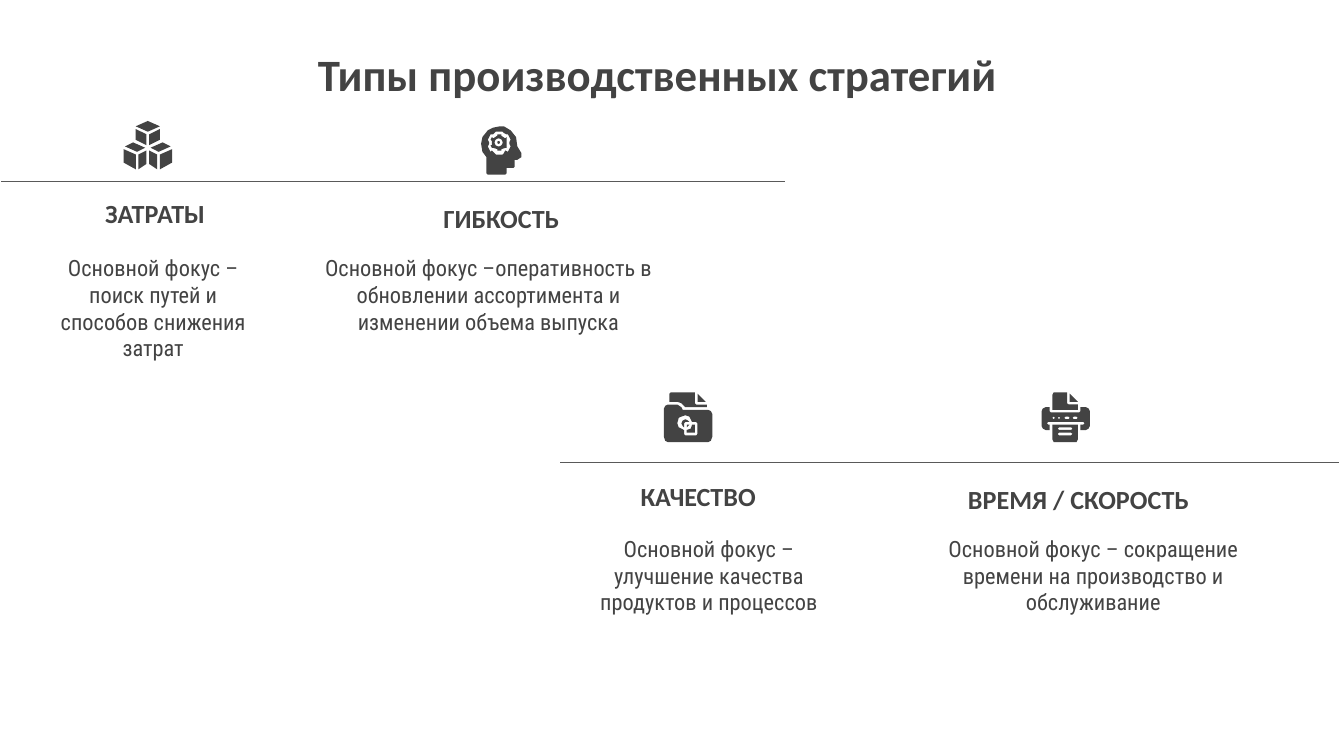
from math import cos, pi, sin

from pptx import Presentation
from pptx import util as u
from pptx.dml.color import RGBColor
from pptx.enum import shapes, text
from pptx.oxml.ns import qn
from lxml import etree

PX = u.Inches(1) // 100
INK = RGBColor(0x43, 0x43, 0x43)
RULE = RGBColor(0x59, 0x59, 0x59)


def px(*lengths):
    return [u.Emu(round(length * PX)) for length in lengths]


def circle(x, y, radius):
    turns = [2 * pi * step / 16 for step in range(16)]
    return [(x + radius * cos(turn), y + radius * sin(turn)) for turn in turns]


def slot(left, top, right, bottom):
    return [(left + 1, top), (right - 1, top), (right, top + 1), (right, bottom - 1),
            (right - 1, bottom), (left + 1, bottom), (left, bottom - 1), (left, top + 1)]


def cubes_icon():
    right_faces = [
        [(27, 6), (19, 10), (19, 18), (27, 14)],
        [(19, 22), (19, 32), (25, 36), (25, 25)],
        [(29, 16), (20, 20), (26, 23), (35, 19)],
        [(36, 21), (27, 25), (27, 36), (36, 31)],
    ]
    left_faces = [[(36 - x, y) for x, y in face] for face in right_faces]
    lid = [(18, 0), (9, 4), (18, 8), (27, 4)]
    return [[face] for face in right_faces + left_faces + [lid]]


def head_icon():
    profile = [(14, 0), (9, 1), (5, 3), (1, 8), (0, 13), (1, 19), (4, 23), (4, 35),
               (5, 36), (18, 36), (19, 35), (19, 31), (24, 31), (25, 30), (25, 25),
               (27, 25), (30, 23), (30, 20), (27, 15), (26, 8), (22, 3), (17, 0)]
    gear_gap = [(11, 4), (16, 4), (17, 5), (19, 6), (20, 6), (22, 10), (21, 12),
                (21, 13), (22, 15), (20, 19), (18, 18), (17, 20), (16, 21), (11, 21),
                (10, 20), (8, 18), (7, 19), (5, 15), (6, 13), (6, 12), (5, 10),
                (7, 6), (9, 6), (10, 5)]
    gear = [(12, 6), (12, 7), (9, 9), (8, 8), (7, 10), (8, 11), (8, 14), (7, 14),
            (8, 16), (9, 16), (12, 17), (12, 18), (15, 18), (15, 17), (18, 16),
            (19, 16), (19, 14), (19, 11), (19, 10), (19, 8), (18, 9),
            (15, 7), (15, 6)]
    return [[profile, gear_gap], [gear, circle(13, 12, 3)], [circle(13, 12, 1)]]


def folder_icon():
    corner = [(25, 1), (25, 7), (31, 7)]
    paper = [(5, 0), (4, 1), (4, 7), (10, 7), (13, 8), (16, 11), (32, 11), (32, 9),
             (24, 9), (23, 8), (23, 0)]
    overlap = [(17, 24), (17, 26), (19, 24)]
    disc = [(16, 20), (14, 21), (13, 23), (14, 25), (15, 26), (15, 23), (16, 22),
            (19, 22), (18, 21)]
    square = [(21, 24), (20, 27), (17, 28), (17, 30), (23, 30), (23, 24)]
    cover = [(3, 9), (1, 10), (0, 12), (0, 33), (1, 36), (3, 37), (33, 37), (35, 36),
             (36, 33), (36, 16), (35, 14), (33, 13), (14, 13), (13, 11), (10, 9)]
    emblem_gap = [(16, 17), (19, 18), (21, 22), (24, 22), (25, 23), (25, 31), (24, 32),
                  (16, 32), (15, 31), (15, 28), (11, 26), (10, 23), (11, 19), (13, 18)]
    return [[corner], [paper], [overlap], [disc], [square], [cover, emblem_gap]]


def printer_icon():
    tray = [(8, 24), (8, 35), (9, 37), (26, 37), (27, 35), (27, 24)]
    corner = [(21, 1), (21, 7), (27, 7)]
    case = [(3, 11), (1, 12), (0, 14), (0, 25), (1, 27), (3, 28), (6, 28), (6, 24),
            (5, 24), (4, 23), (5, 22), (31, 22), (32, 23), (31, 24), (29, 24), (29, 28),
            (33, 28), (35, 27), (36, 25), (36, 14), (35, 12), (33, 11), (29, 11),
            (29, 14), (28, 15), (7, 15), (6, 14), (6, 11)]
    paper = [(9, 0), (8, 2), (8, 13), (27, 13), (27, 9), (20, 9), (19, 8), (19, 0)]
    lines = [slot(12, top, 23, top + 2) for top in (26, 30)]
    lamps = [slot(left, 18, right, 20)
             for left, right in ((8, 10), (12, 14), (17, 21), (23, 27))]
    return [[tray] + lines, [corner], [case] + lamps, [paper]]


def add_icon(slide, left, top, parts):
    icon = slide.shapes.add_group_shape()
    for contours in parts:
        outlines = [[px(left + x, top + y) for x, y in contour] for contour in contours]
        builder = icon.shapes.build_freeform(*outlines[0][0])
        builder.add_line_segments(outlines[0][1:])
        for gap in outlines[1:]:
            builder.move_to(*gap[0])
            builder.add_line_segments(gap[1:])
        part = builder.convert_to_shape()
        part.shadow.inherit = False
        part.fill.solid()
        part.fill.fore_color.rgb = INK
        part.line.fill.background()


def add_label(slide, box, words, size, face, bold=False, anchor=text.MSO_ANCHOR.TOP):
    frame = slide.shapes.add_textbox(*px(*box)).text_frame
    frame.word_wrap = True
    frame.vertical_anchor = anchor
    frame.margin_left, frame.margin_top, frame.margin_right, frame.margin_bottom = px(10, 10, 10, 10)
    paragraph = frame.paragraphs[0]
    paragraph.text = words
    paragraph.alignment = text.PP_ALIGN.CENTER
    font = paragraph.font
    font.size, font.name, font.bold = u.Pt(size), face, bold
    font.color.rgb = INK


def add_row(slide, left, top, width, strategies):
    rule = slide.shapes.add_connector(
        shapes.MSO_CONNECTOR.STRAIGHT, *px(left + width, top, left, top))
    rule.line.color.rgb = RULE
    rule.line.width = u.Pt(0.75)
    etree.SubElement(rule._element.spPr, qn("a:effectLst"))
    for heading, (x, y, w), focus, (focus_x, focus_w), icon, (icon_x, icon_y) in strategies:
        add_label(slide, (left + x, top + y, w, 47), heading, 14, "Calibri", True,
                  text.MSO_ANCHOR.BOTTOM)
        add_label(slide, (left + focus_x, top + 44, focus_w, 110), focus, 12,
                  "Roboto Condensed")
        add_icon(slide, left + icon_x, top + icon_y, icon)


def main():
    deck = Presentation()
    deck.slide_width = u.Inches(10)
    deck.slide_height = deck.slide_width * 9 // 16
    slide = deck.slides.add_slide(deck.slide_layouts[6])
    add_label(slide, (204, 25, 570, 72), "Типы производственных стратегий", 24, "Calibri", True)
    add_row(slide, 1, 135, 583, [
        ("ЗАТРАТЫ", (17, -2, 195),
         "Основной фокус – поиск путей и способов снижения затрат", (32, 162),
         cubes_icon(), (91, -45)),
        ("ГИБКОСТЬ", (273, 2, 198),
         "Основной фокус –оперативность в обновлении ассортимента и изменении объема выпуска",
         (228, 269), head_icon(), (357, -41)),
    ])
    add_row(slide, 417, 344, 579, [
        ("КАЧЕСТВО", (5, 0, 195),
         "Основной фокус – улучшение качества продуктов и процессов", (13, 195),
         folder_icon(), (77, -52)),
        ("ВРЕМЯ / СКОРОСТЬ", (288, 2, 195),
         "Основной фокус – сокращение времени на производство и обслуживание", (256, 281),
         printer_icon(), (358, -52)),
    ])
    deck.save("out.pptx")


if __name__ == "__main__":
    main()
